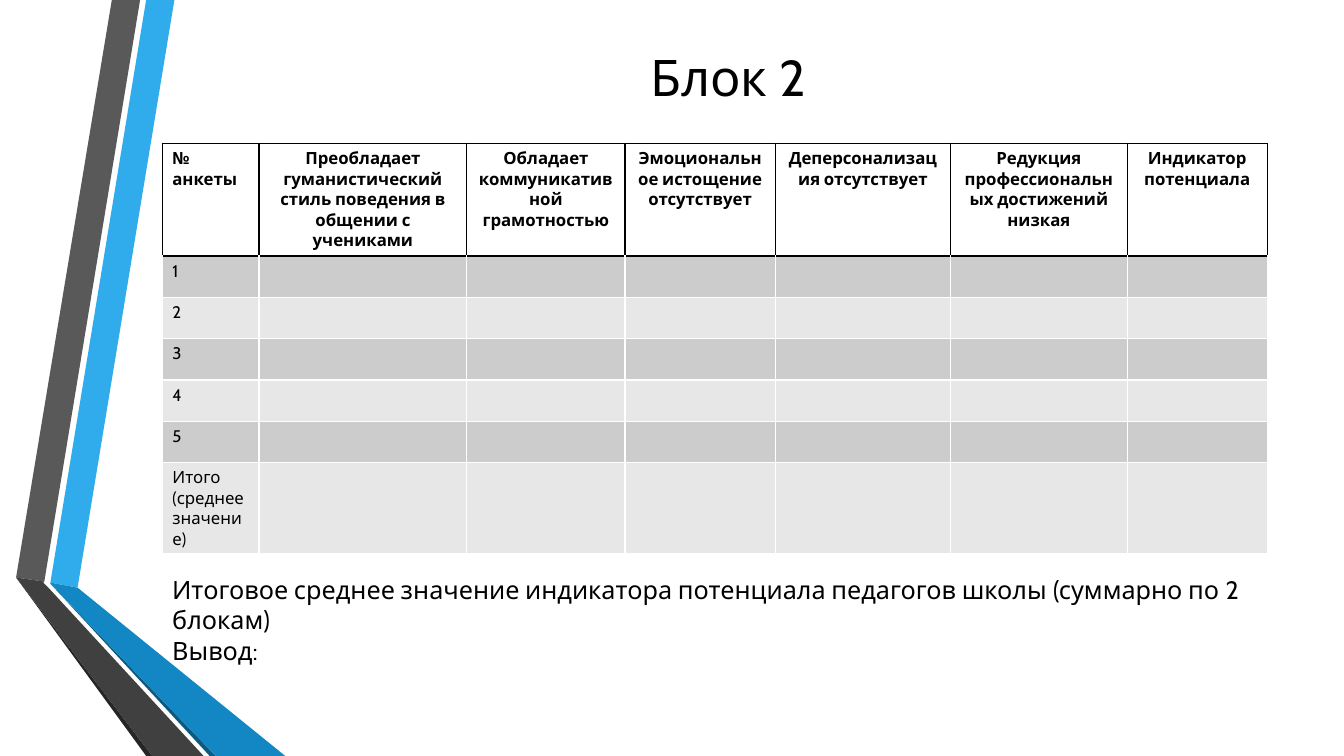
import pptx
import pptx.dml.color
import pptx.enum.text
import pptx.oxml
import pptx.oxml.ns
import pptx.util

WIDTH, HEIGHT = 13.33, 7.5
LEFT, CONTENT_WIDTH = 1.61, 10.96
FONT = "Cabin"
BLACK, WHITE = "000000", "FFFFFF"
BANDS = ("E7E7E7", "CCCCCC")
CENTER = pptx.enum.text.PP_ALIGN.CENTER
MIDDLE = pptx.enum.text.MSO_ANCHOR.MIDDLE

RIBBONS = [
    ("30ACEC", [(0.5, 5.78), (0.77, 5.83), (1.73, 0), (1.45, 0)]),
    ("595959", [(1.39, 0), (1.11, 0), (0.16, 5.73), (0.44, 5.77)]),
    ("262626", [(0.16, 5.73), (1.45, HEIGHT), (1.51, HEIGHT)]),
    ("0C5A82", [(0.5, 5.79), (2.08, HEIGHT), (2.14, HEIGHT)]),
    ("1287C3", [(0.5, 5.79), (2.14, HEIGHT), (2.83, HEIGHT), (0.77, 5.83), (0.5, 5.78)]),
    ("404040", [(2.02, HEIGHT), (0.48, 5.83), (0.43, 5.78), (0.44, 5.77), (0.16, 5.73),
                (1.51, HEIGHT)]),
]
COLUMNS = [
    ("№ анкеты", 0.96),
    ("Преобладает гуманистический стиль поведения в общении с учениками", 2.06),
    ("Обладает коммуникативной грамотностью", 1.57),
    ("Эмоциональное истощение отсутствует", 1.49),
    ("Деперсонализация отсутствует", 1.74),
    ("Редукция профессиональных достижений низкая", 1.75),
    ("Индикатор потенциала", 1.39),
]
ROW_LABELS = ["1", "2", "3", "4", "5", "Итого (среднее значение)"]
HEADER_HEIGHT, ROW_HEIGHT = 1.12, 0.41


def color(code):
    """Turn a hex string into a colour."""
    return pptx.dml.color.RGBColor.from_string(code)


def inches(*lengths):
    """Convert lengths in inches to whole slide units."""
    return [pptx.util.Inches(length) for length in lengths]


def style_paragraph(para, size, bold=False, align=None):
    """Set the font and alignment of one paragraph."""
    para.font.name = FONT
    para.font.size = pptx.util.Pt(size)
    para.font.bold = bold
    para.font.color.rgb = color(BLACK)
    if align is not None:
        para.alignment = align


def add_text(page, box, lines, size, align=None, anchor=None):
    """Place lines of text, one paragraph each, in a box."""
    frame = page.shapes.add_textbox(*inches(*box)).text_frame
    frame.word_wrap = True
    if anchor is not None:
        frame.vertical_anchor = anchor
    frame.text = "\n".join(lines)
    for para in frame.paragraphs:
        style_paragraph(para, size, align=align)


def add_ribbons(page, left, top):
    """Draw the folded ribbons from the given corner."""
    for fill, points in RIBBONS:
        corners = [inches(left + x, top + y) for x, y in points]
        builder = page.shapes.build_freeform(*corners[0])
        builder.add_line_segments(corners[1:], close=True)
        ribbon = builder.convert_to_shape()
        ribbon.shadow.inherit = False
        ribbon.fill.solid()
        ribbon.fill.fore_color.rgb = color(fill)
        ribbon.line.fill.background()


def set_borders(cell, line_colors):
    """Draw one-point borders, given as left, right, top and bottom colours."""
    properties = cell._tc.get_or_add_tcPr()
    for index, (side, code) in enumerate(zip("LRTB", line_colors)):
        properties.insert(index, pptx.oxml.parse_xml(
            f'<a:ln{side} {pptx.oxml.ns.nsdecls("a")} w="12700"><a:solidFill>'
            f'<a:srgbClr val="{code}"/></a:solidFill></a:ln{side}>'))


def fill_cell(cell, text, row, column):
    """Write and style a cell according to its place in the table."""
    header = row == 0
    cell.text = text
    style_paragraph(cell.text_frame.paragraphs[0], 12, bold=header,
                    align=CENTER if header and column else None)
    if header:
        cell.fill.background()
        set_borders(cell, [BLACK] * 4)
    else:
        cell.fill.solid()
        cell.fill.fore_color.rgb = color(BANDS[row % 2])
        set_borders(cell, [WHITE, WHITE, BLACK if row == 1 else WHITE, WHITE])


def add_survey_table(page, box):
    """Build the survey table in a box."""
    rows = [[heading for heading, _ in COLUMNS]]
    rows += [[label] + [""] * (len(COLUMNS) - 1) for label in ROW_LABELS]
    table = page.shapes.add_table(len(rows), len(COLUMNS), *inches(*box)).table
    table.first_row = table.horz_banding = False
    for column, (_, width) in zip(table.columns, COLUMNS):
        column.width = pptx.util.Inches(width)
    for row, texts in enumerate(rows):
        table.rows[row].height = pptx.util.Inches(ROW_HEIGHT if row else HEADER_HEIGHT)
        for column, text in enumerate(texts):
            fill_cell(table.cell(row, column), text, row, column)


def build_survey_slide(deck):
    """Add the slide with its ribbons, title, table and conclusion."""
    page = deck.slides.add_slide(deck.slide_layouts[6])
    add_ribbons(page, 0, 0)
    add_text(page, (1.74, 0.49, CONTENT_WIDTH, 0.54), ["Блок 2"], 36, CENTER, MIDDLE)
    table_height = HEADER_HEIGHT + ROW_HEIGHT * len(ROW_LABELS)
    add_survey_table(page, (LEFT, 1.42, CONTENT_WIDTH, table_height))
    add_text(page, (LEFT, 5.65, CONTENT_WIDTH, 0.71), [
        "Итоговое среднее значение индикатора потенциала педагогов школы (суммарно по 2 блокам)",
        "Вывод:",
    ], 18)


def main():
    """Create and save the deck."""
    deck = pptx.Presentation()
    deck.slide_width, deck.slide_height = inches(WIDTH, HEIGHT)
    build_survey_slide(deck)
    deck.save("out.pptx")


if __name__ == "__main__":
    main()
